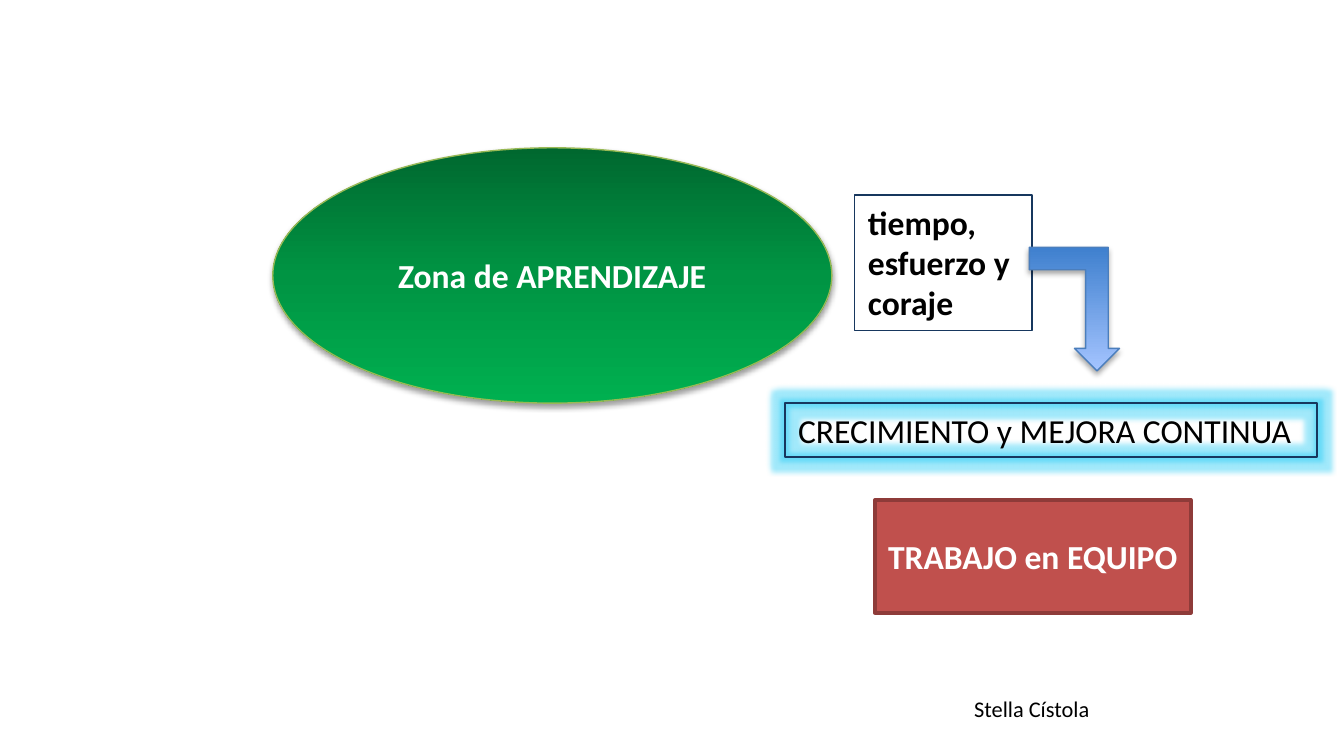
from dataclasses import dataclass

from lxml import etree
from pptx import Presentation
from pptx.dml.color import RGBColor
from pptx.enum.shapes import MSO_SHAPE
from pptx.enum.text import MSO_ANCHOR, MSO_AUTO_SIZE, PP_ALIGN
from pptx.oxml.ns import qn
from pptx.util import Inches, Pt

OVAL, RECT, BENT = MSO_SHAPE.OVAL, MSO_SHAPE.RECTANGLE, MSO_SHAPE.BENT_UP_ARROW
MIDDLE, CENTER = MSO_ANCHOR.MIDDLE, PP_ALIGN.CENTER
GROW = MSO_AUTO_SIZE.SHAPE_TO_FIT_TEXT
WIDTH = 10
HEIGHT = WIDTH * 9 / 16


@dataclass(frozen=True)
class Theme:
    font: str = "Calibri"
    body: int = 18
    small: int = 12
    thin: float = 0.75
    thick: float = 2
    white: str = "FFFFFF"
    black: str = "000000"
    navy: str = "17375E"
    lime: str = "98B955"
    blue: str = "4B7EBC"
    red: str = "C0504D"
    maroon: str = "8E3B39"
    glow: str = "14C8F5"
    green: tuple = ((0, "00682F"), (50, "009443"), (100, "00B050"))
    sky: tuple = ((0, "3F80CE"), (100, "A4C4FF"))


THEME = Theme()


def rgb(code):
    return RGBColor.from_string(code)


def node(parent, tag, **attrs):
    return etree.SubElement(parent, qn(tag), {k: str(v) for k, v in attrs.items()})


def tint(parent, color, alpha):
    clr = node(parent, "a:srgbClr", val=color)
    node(clr, "a:alpha", val=alpha * 1000)


def effects(shape):
    """Clear the inherited effects and return the empty list."""
    shape.shadow.inherit = False
    return shape._element.spPr.find(qn("a:effectLst"))


def shade(shape, alpha, dist):
    drop = node(effects(shape), "a:outerShdw", blurRad=Pt(3.1), dist=Pt(dist),
                dir=90 * 60000, rotWithShape=0)
    tint(drop, THEME.black, alpha)


def blend(shape, stops, angle):
    shape.fill.gradient()
    grad = shape._element.spPr.find(qn("a:gradFill"))
    for child in list(grad):
        grad.remove(child)
    steps = node(grad, "a:gsLst")
    for place, color in stops:
        node(node(steps, "a:gs", pos=place * 1000), "a:srgbClr", val=color)
    node(grad, "a:lin", ang=angle * 60000, scaled=0)


def edge(shape, color, width):
    shape.line.color.rgb = rgb(color)
    shape.line.width = Pt(width)


def write(shape, text, color, size=THEME.body, bold=False, align=None):
    frame = shape.text_frame
    frame.text = text
    for para in frame.paragraphs:
        para.alignment = align
        for run in para.runs:
            font = run.font
            font.name, font.size, font.bold = THEME.font, Pt(size), bold
            font.color.rgb = rgb(color)


def form(slide, kind, box):
    return slide.shapes.add_shape(kind, *map(Inches, box))


def label(slide, box, text, **style):
    """Text box that grows with its unwrapped text."""
    shape = slide.shapes.add_textbox(*map(Inches, box))
    write(shape, text, THEME.black, **style)
    shape.text_frame.word_wrap = False
    shape.text_frame.auto_size = GROW
    return shape


def badge(slide, kind, box, text):
    """Shape with centred bold white text."""
    shape = form(slide, kind, box)
    write(shape, text, THEME.white, bold=True, align=CENTER)
    shape.text_frame.vertical_anchor = MIDDLE
    return shape


def zone(slide, box):
    oval = badge(slide, OVAL, box, "Zona de APRENDIZAJE")
    blend(oval, THEME.green, 90)
    edge(oval, THEME.lime, THEME.thin)
    shade(oval, 38, 1.6)


def effort(slide, box):
    left, top, width, height = box
    note = label(slide, (left, top, 1.32, 1.01),
                 "tiempo,\nesfuerzo y\ncoraje", bold=True)
    edge(note, THEME.navy, THEME.thin)
    # Arrow bending down to the result
    arrow = form(slide, BENT, (left + 1.3, top + 0.39, width - 1.3, height - 0.39))
    arrow._element.spPr.find(qn("a:xfrm")).set("flipV", "1")
    blend(arrow, THEME.sky, 270)
    edge(arrow, THEME.blue, THEME.thin)
    shade(arrow, 35, 1.8)


def growth(slide, box):
    note = label(slide, box, "CRECIMIENTO y MEJORA CONTINUA")
    edge(note, THEME.navy, THEME.thin)
    tint(node(effects(note), "a:glow", rad=Pt(5)), THEME.glow, 40)


def team(slide, box):
    block = badge(slide, RECT, box, "TRABAJO en EQUIPO")
    block.text_frame.word_wrap = False
    block.fill.solid()
    block.fill.fore_color.rgb = rgb(THEME.red)
    edge(block, THEME.maroon, THEME.thick)
    effects(block)


def main():
    deck = Presentation()
    deck.slide_width, deck.slide_height = Inches(WIDTH), Inches(HEIGHT)
    slide = deck.slides.add_slide(deck.slide_layouts[6])
    zone(slide, (2.03, 1.1, 4.16, 1.9))
    effort(slide, (6.36, 1.45, 1.97, 1.31))
    growth(slide, (5.84, 3, 3.96, 0.4))
    team(slide, (6.51, 3.72, 2.35, 0.84))
    # Author
    label(slide, (7.15, 5.12, 1.07, 0.3), "Stella Cístola", size=THEME.small)
    deck.save("out.pptx")


if __name__ == "__main__":
    main()
